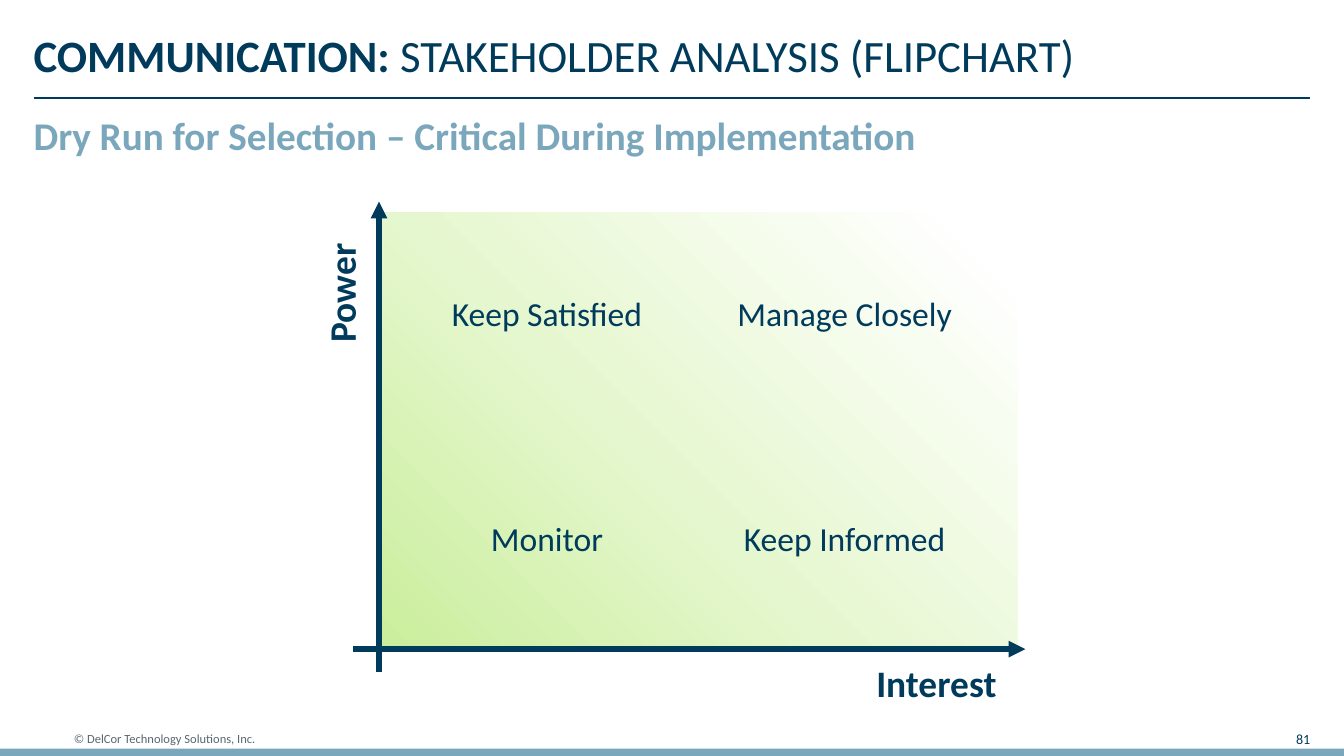
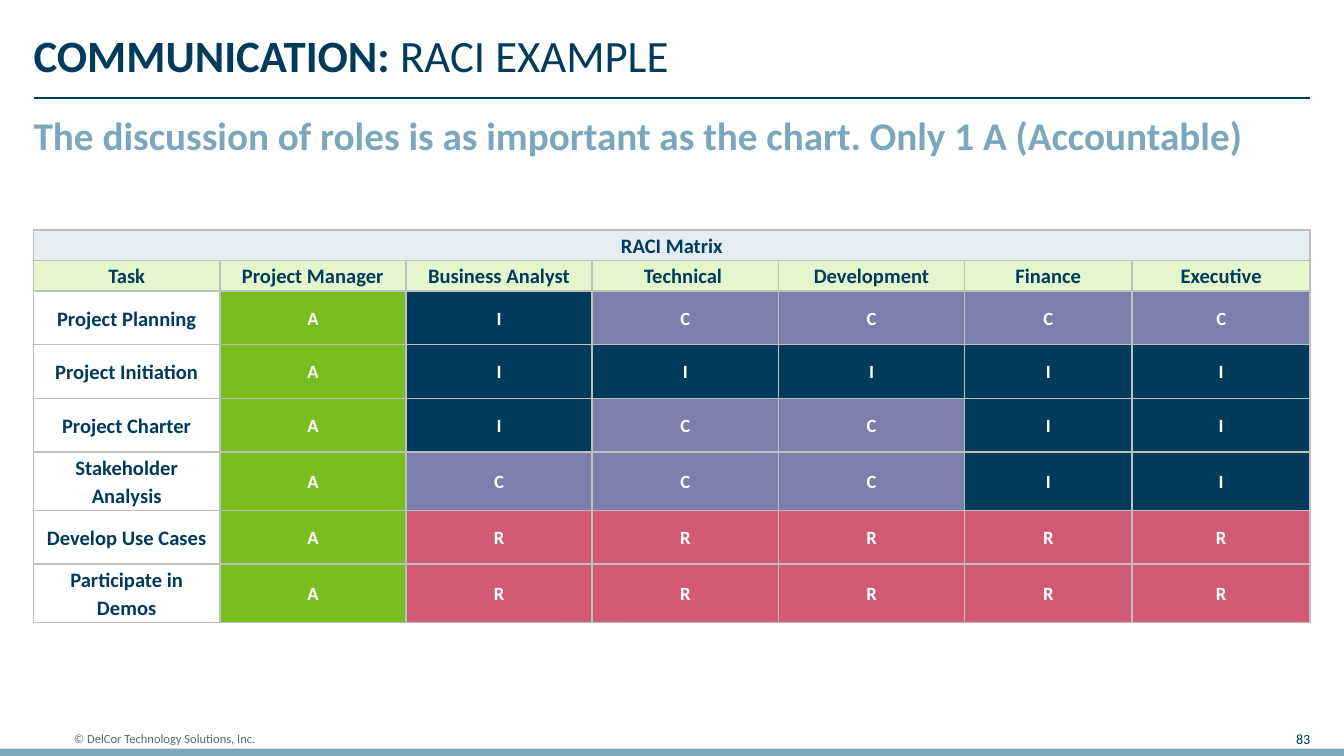
from lxml import etree
from pptx import Presentation
from pptx.dml.color import RGBColor
from pptx.enum.shapes import MSO_CONNECTOR, MSO_SHAPE
from pptx.enum.text import MSO_ANCHOR, MSO_AUTO_SIZE, PP_ALIGN
from pptx.oxml import parse_xml
from pptx.oxml.ns import qn
from pptx.util import Inches, Pt

LEFT, MID, RIGHT = PP_ALIGN.LEFT, PP_ALIGN.CENTER, PP_ALIGN.RIGHT
TOP, CENTER = MSO_ANCHOR.TOP, MSO_ANCHOR.MIDDLE
NO_FIT = MSO_AUTO_SIZE.NONE
RECT, LINE = MSO_SHAPE.RECTANGLE, MSO_CONNECTOR.STRAIGHT
NS = 'xmlns:a="http://schemas.openxmlformats.org/drawingml/2006/main"'
FONT = "Calibri"
NAVY, BLUE, GRAY, WHITE, EDGE = "003B5C", "7BA7BC", "5B6770", "FFFFFF", "BFBFBF"

LEAD = "COMMUNICATION: "
CREDIT = "© DelCor Technology Solutions, Inc."
PAGES = [
    ("STAKEHOLDER ANALYSIS (FLIPCHART)",
     "Dry Run for Selection – Critical During Implementation", 81),
    ("RACI EXAMPLE",
     "The discussion of roles is as important as the chart. Only 1 A (Accountable)", 83),
]

GRID = [["Keep Satisfied", "Manage Closely"], ["Monitor", "Keep Informed"]]
GRID_COLS = [(3.33, 1.48), (5.47, 1.63)]
GRID_TOPS = [2.18, 3.85]
STOPS = [(0, "CAEE9C"), (42, "E5F7CE"), (94, WHITE)]
AXES = [(2.82, 5, 2.82, 1.5), (2.63, 4.83, 7.63, 4.83)]
NAMES = [("Interest", (6.52, 4.91, 1.05, 0.48), 0),
         ("Power", (2.04, 1.83, 1.05, 0.39), 270)]

HEADING = "RACI Matrix"
ROLES = ["Task", "Project Manager", "Business Analyst", "Technical ",
         "Development", "Finance", "Executive"]
TASKS = [("Project Planning", "AICCCC"), ("Project Initiation", "AIIIII"),
         ("Project Charter", "AICCII"), ("Stakeholder Analysis", "ACCCII"),
         ("Develop Use Cases", "ARRRRR"), ("Participate in Demos", "ARRRRR")]
CODES = {"R": "D25B73", "A": "78BE20", "C": "7C7FAB", "I": NAVY}
SPAN = 9.5
SHARES = [1.39] * 5 + [1.25, 1.33]
WIDTHS = [SPAN * share / sum(SHARES) for share in SHARES]
HEIGHTS = [0.22] * 2 + [0.4] * len(TASKS)


def rgb(code):
    return RGBColor.from_string(code)


def style(para, size, color, bold=False, align=LEFT):
    para.alignment = align
    for run in para.runs:
        font = run.font
        font.name, font.size, font.bold = FONT, Pt(size), bold
        font.color.rgb = rgb(color)


def frame(shape, anchor=TOP):
    box = shape.text_frame
    box.margin_left = box.margin_right = box.margin_top = box.margin_bottom = 0
    box.word_wrap, box.auto_size, box.vertical_anchor = True, NO_FIT, anchor
    return box


def label(slide, text, spot, size, color=NAVY, bold=False, align=LEFT, anchor=TOP):
    shape = slide.shapes.add_textbox(*map(Inches, spot))
    box = frame(shape, anchor)
    box.text = text
    style(box.paragraphs[0], size, color, bold, align)
    return shape


def block(slide, spot):
    shape = slide.shapes.add_shape(RECT, *map(Inches, spot))
    shape.shadow.inherit = False
    shape.line.fill.background()
    return shape


def rule(slide, ends, width, arrow=False):
    link = slide.shapes.add_connector(LINE, *map(Inches, ends))
    link.line.color.rgb = rgb(NAVY)
    link.line.width = Pt(width)
    if arrow:
        etree.SubElement(link.line._get_or_add_ln(), qn("a:tailEnd"), type="triangle")
    etree.SubElement(link._element.spPr, qn("a:effectLst"))


def page(deck, title, claim, number):
    slide = deck.slides.add_slide(deck.slide_layouts[5])
    band = block(slide, (0, 5.57, 10, 0.09))
    band.fill.solid()
    band.fill.fore_color.rgb = rgb(BLUE)
    label(slide, CREDIT, (0.55, 5.41, 1.92, 0.17), 6.75, GRAY, anchor=CENTER)
    label(slide, str(number), (9.39, 5.41, 0.36, 0.17), 7.5, align=RIGHT, anchor=CENTER)
    rule(slide, (0.25, 0.73, 9.75, 0.73), 1)
    head = slide.shapes.title
    head.left, head.top, head.width, head.height = map(Inches, (0.25, 0.25, 9.5, 0.48))
    para = frame(head).paragraphs[0]
    for text in (LEAD, title):
        para.add_run().text = text
    style(para, 24, NAVY)
    para.runs[0].font.bold = True
    para.line_spacing = 0.9
    label(slide, claim, (0.25, 0.83, 9.35, 0.35), 21, BLUE, True)
    return slide


def shade(shape):
    stops = "".join(f'<a:gs pos="{at * 1000}"><a:srgbClr val="{color}"/></a:gs>'
                    for at, color in STOPS)
    fill = parse_xml(f'<a:gradFill {NS} rotWithShape="1"><a:gsLst>{stops}</a:gsLst>'
                     '<a:path path="circle"><a:fillToRect t="100000" r="100000"/>'
                     '</a:path></a:gradFill>')
    shape._element.spPr.find(qn("a:prstGeom")).addnext(fill)


def matrix(slide):
    shade(block(slide, (2.82, 1.58, 4.75, 3.26)))
    for ends in AXES:
        rule(slide, ends, 3, True)
    for text, spot, turn in NAMES:
        label(slide, text, spot, 20, bold=True).rotation = turn
    for top, row in zip(GRID_TOPS, GRID):
        for (left, width), text in zip(GRID_COLS, row):
            label(slide, text, (left, top, width, 0.48), 18, align=MID)


def fill(cell, text, back, size=11, color=NAVY, anchor=CENTER):
    cell.margin_left = cell.margin_right = Inches(0.08)
    cell.margin_top = cell.margin_bottom = Inches(0.01)
    cell.vertical_anchor = anchor
    cell.text = text
    para = cell.text_frame.paragraphs[0]
    style(para, size, color, True, MID)
    para.line_spacing = 1.1
    cell.fill.solid()
    cell.fill.fore_color.rgb = rgb(back)
    for spot, side in enumerate("LRTB"):
        edge = parse_xml(f'<a:ln{side} {NS} w="12700"><a:solidFill>'
                         f'<a:srgbClr val="{EDGE}"/></a:solidFill></a:ln{side}>')
        cell._tc.get_or_add_tcPr().insert(spot, edge)


def raci(slide):
    spot = map(Inches, (0.25, 1.71, SPAN, sum(HEIGHTS)))
    table = slide.shapes.add_table(len(HEIGHTS), len(WIDTHS), *spot).table
    table.first_row = table.horz_banding = False
    for col, width in zip(table.columns, WIDTHS):
        col.width = Inches(width)
    for row, height in zip(table.rows, HEIGHTS):
        row.height = Inches(height)
    table.cell(0, 0).merge(table.cell(0, len(WIDTHS) - 1))
    for col, role in enumerate(ROLES):
        fill(table.cell(0, col), "" if col else HEADING, "E4EDF1", anchor=TOP)
        fill(table.cell(1, col), role, "E4F6CD", anchor=TOP)
    for row, (task, codes) in enumerate(TASKS, 2):
        fill(table.cell(row, 0), task, WHITE)
        for col, code in enumerate(codes, 1):
            fill(table.cell(row, col), code, CODES[code], 10, WHITE)


def main():
    """Build the two communication slides."""
    deck = Presentation()
    deck.slide_width = Inches(10)
    deck.slide_height = deck.slide_width * 9 // 16
    for info, draw in zip(PAGES, (matrix, raci)):
        draw(page(deck, *info))
    deck.save("out.pptx")


if __name__ == "__main__":
    main()
